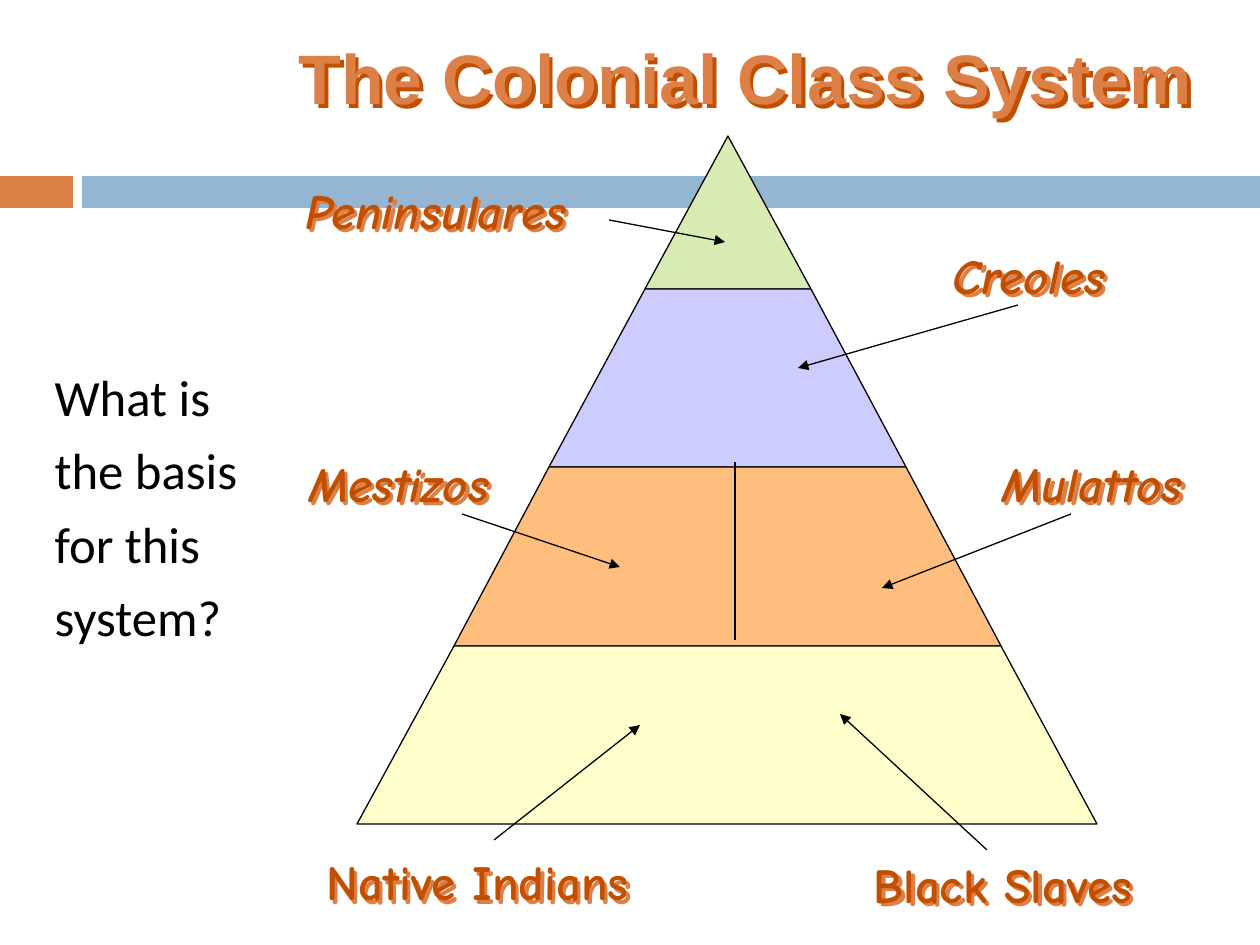
from itertools import pairwise

from lxml.etree import SubElement
from pptx import Presentation
from pptx.dml.color import RGBColor
from pptx.enum.shapes import MSO_CONNECTOR, MSO_SHAPE
from pptx.enum.text import MSO_ANCHOR, PP_ALIGN
from pptx.oxml.ns import qn
from pptx.util import Pt

EMU_PER_PX = 914400 / 126

BLACK = RGBColor(0x00, 0x00, 0x00)
ORANGE = RGBColor(0xDD, 0x80, 0x47)
BLUE = RGBColor(0x94, 0xB6, 0xD2)
RUST = RGBColor(0xC2, 0x4F, 0x00)
GREEN = RGBColor(0xD8, 0xEB, 0xB3)
LAVENDER = RGBColor(0xCC, 0xCC, 0xFF)
PEACH = RGBColor(0xFF, 0xBE, 0x7D)
CREAM = RGBColor(0xFF, 0xFF, 0xCC)

# Pyramid edges from apex to base: y, left x, right x
EDGES = [(136, 728, 728), (289, 645, 811), (467, 549, 906),
         (646, 454, 1001), (824, 357, 1097)]
TIER_COLORS = [GREEN, LAVENDER, PEACH, CREAM]

# Class labels: text, left, top, width, italic
LABELS = [
    ("Peninsulares", 262, 168, 347, True),
    ("Creoles", 903, 233, 252, True),
    ("Mestizos", 273, 441, 252, True),
    ("Mulattos", 977, 441, 231, True),
    ("Native Indians", 262, 840, 431, False),
    ("Black Slaves", 809, 842, 388, False),
]

# Pointers from each label to its tier
ARROWS = [
    ((609, 220), (725, 242)),
    ((1018, 305), (798, 368)),
    ((462, 514), (620, 567)),
    ((1071, 514), (882, 588)),
    ((494, 840), (640, 725)),
    ((987, 850), (840, 714)),
]


def px(length):
    return round(length * EMU_PER_PX)


def place(shape, left, top, width, height):
    shape.left, shape.top = px(left), px(top)
    shape.width, shape.height = px(width), px(height)


def write_text(shape, text, *, size, font, color, bold=False, italic=False,
               align=PP_ALIGN.LEFT, space_before=0, margin_top=6):
    frame = shape.text_frame
    frame.word_wrap = True
    frame.vertical_anchor = MSO_ANCHOR.TOP
    frame.margin_top, frame.margin_bottom = px(margin_top), 0
    frame.text = text
    for index, paragraph in enumerate(frame.paragraphs):
        properties = paragraph._p.get_or_add_pPr()
        properties.set("marL", "0")
        properties.set("indent", "0")
        SubElement(properties, qn("a:buNone"))
        paragraph.alignment = align
        paragraph.space_before = Pt(space_before if index else 0)
        for run in paragraph.runs:
            run.font.size, run.font.name = Pt(size), font
            run.font.bold, run.font.italic = bold, italic
            run.font.color.rgb = color


def add_text_shadow(shape, color):
    shape.fill.background()
    effects = SubElement(shape._element.spPr, qn("a:effectLst"))
    shadow = SubElement(effects, qn("a:outerShdw"), dist="35921",
                        dir="2700000", algn="ctr", rotWithShape="0")
    SubElement(shadow, qn("a:srgbClr"), val=str(color))


def add_bar(slide, left, width, color):
    bar = slide.shapes.add_shape(MSO_SHAPE.RECTANGLE, px(left), px(176),
                                 px(width), px(32))
    bar.shadow.inherit = False
    bar.fill.solid()
    bar.fill.fore_color.rgb = color
    bar.line.fill.background()


def add_tier(group, upper, lower, color):
    (top, top_left, top_right), (bottom, bottom_left, bottom_right) = upper, lower
    builder = group.shapes.build_freeform(top_left, top, scale=EMU_PER_PX)
    builder.add_line_segments([(top_right, top), (bottom_right, bottom),
                               (bottom_left, bottom)], close=True)
    tier = builder.convert_to_shape()
    tier.shadow.inherit = False
    tier.fill.solid()
    tier.fill.fore_color.rgb = color
    tier.line.color.rgb = BLACK
    tier.line.width = Pt(0.75)


def add_line(slide, start, end, arrow=True):
    connector = slide.shapes.add_connector(
        MSO_CONNECTOR.STRAIGHT, *map(px, start), *map(px, end))
    connector.line.color.rgb = BLACK
    connector.line.width = Pt(0.75)
    if arrow:
        SubElement(connector.line._get_or_add_ln(), qn("a:tailEnd"),
                   type="triangle")
    SubElement(connector._element.spPr, qn("a:effectLst"))


def add_label(slide, text, left, top, width, italic):
    label = slide.shapes.add_textbox(px(left), px(top), px(width), px(72))
    write_text(label, text, size=28, font="Comic Neue", color=RUST, bold=True,
               italic=italic, align=PP_ALIGN.CENTER, margin_top=12)
    add_text_shadow(label, ORANGE)


def main():
    presentation = Presentation()
    presentation.slide_width = px(1260)
    presentation.slide_height = px(945)
    slide = presentation.slides.add_slide(presentation.slide_layouts[1])

    # Band below the title
    add_bar(slide, 0, 73, ORANGE)
    add_bar(slide, 82, 1178, BLUE)

    # Title and question
    title, question = slide.placeholders
    place(title, 273, 21, 945, 97)
    write_text(title, "The Colonial Class System", size=40, font="Arial",
               color=ORANGE, bold=True, align=PP_ALIGN.CENTER, margin_top=14)
    add_text_shadow(title, RUST)
    place(question, 42, 360, 1172, 480)
    write_text(question, "What is\nthe basis\nfor this\nsystem?", size=29,
               font="Calibri", color=BLACK, space_before=7)

    # Pyramid
    pyramid = slide.shapes.add_group_shape()
    for (upper, lower), color in zip(pairwise(EDGES), TIER_COLORS):
        add_tier(pyramid, upper, lower, color)
    add_line(slide, (735, 462), (735, 640), arrow=False)

    # Labels and pointers
    for label in LABELS:
        add_label(slide, *label)
    for start, end in ARROWS:
        add_line(slide, start, end)

    presentation.save("out.pptx")


if __name__ == "__main__":
    main()
